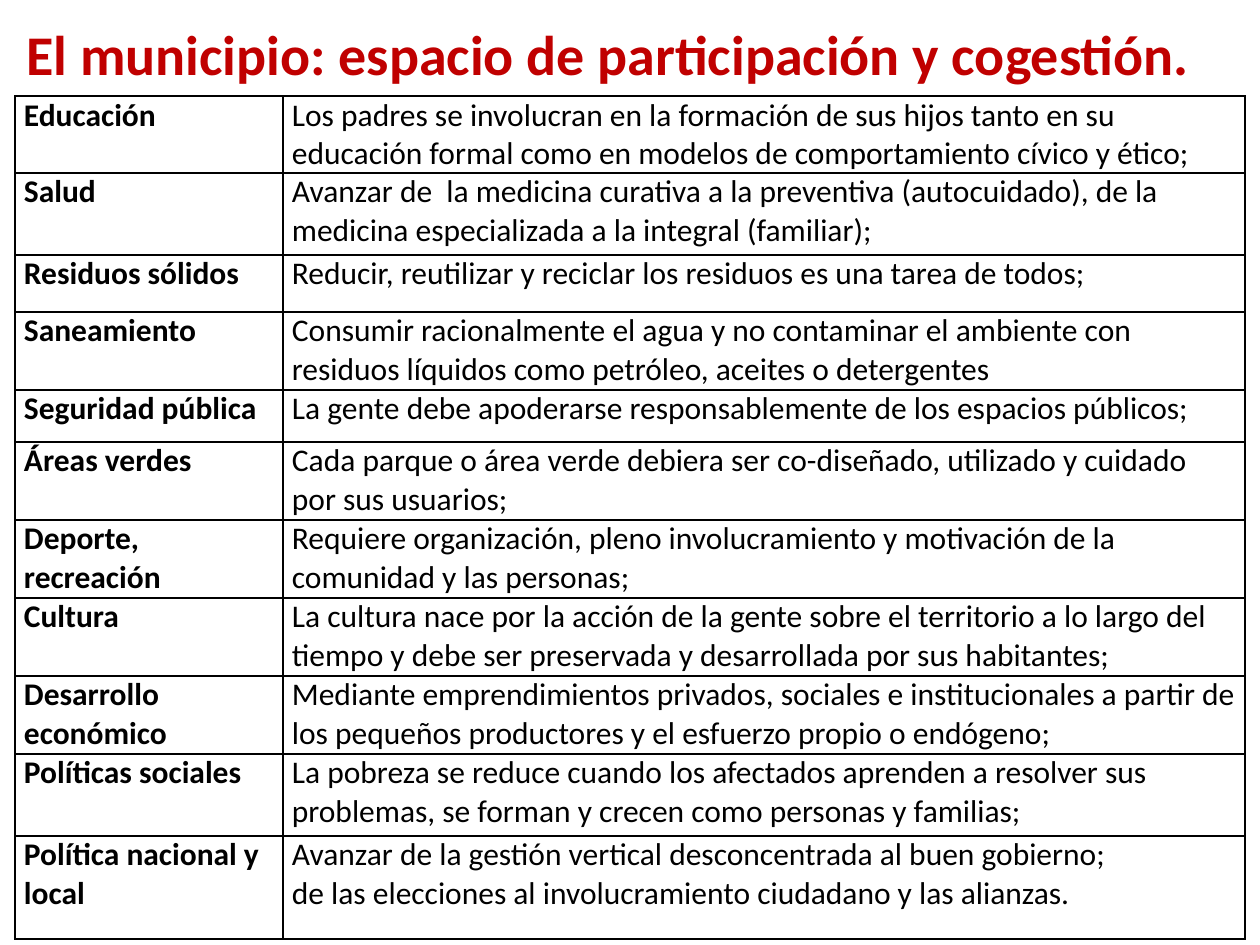
from lxml.etree import SubElement
from pptx import Presentation
from pptx.dml.color import RGBColor
from pptx.enum.text import MSO_ANCHOR, MSO_AUTO_SIZE, PP_ALIGN
from pptx.oxml.ns import qn
from pptx.util import Emu, Pt

# Content
TITLE = "El municipio: espacio de participación y cogestión. "
# (area, paragraphs, row height in px)
AREAS = [
    ("Educación", ["Los padres se involucran en la formación de sus hijos tanto en su educación formal como en modelos de comportamiento cívico y ético;"], 77),
    ("Salud", ["Avanzar de  la medicina curativa a la preventiva (autocuidado), de la medicina especializada a la integral (familiar);"], 82),
    ("Residuos sólidos", ["Reducir, reutilizar y reciclar los residuos es una tarea de todos;"], 57),
    ("Saneamiento", ["Consumir racionalmente el agua y no contaminar el ambiente con residuos líquidos como petróleo, aceites o detergentes"], 78),
    ("Seguridad pública", ["La gente debe apoderarse responsablemente de los espacios públicos;"], 52),
    ("Áreas verdes", ["Cada parque o área verde debiera ser co-diseñado, utilizado y cuidado por sus usuarios;"], 78),
    ("Deporte, recreación", ["Requiere organización, pleno involucramiento y motivación de la comunidad y las personas;"], 78),
    ("Cultura", ["La cultura nace por la acción de la gente sobre el territorio a lo largo del tiempo y debe ser preservada y desarrollada por sus habitantes;"], 78),
    ("Desarrollo económico", ["Mediante emprendimientos privados, sociales e institucionales a partir de los pequeños productores y el esfuerzo propio o endógeno;"], 78),
    ("Políticas sociales", ["La pobreza se reduce cuando los afectados aprenden a resolver sus problemas, se forman y crecen como personas y familias;"], 82),
    ("Política nacional y local", ["Avanzar de la gestión vertical desconcentrada al buen gobierno;",
                                   "de las elecciones al involucramiento ciudadano y las alianzas."], 103),
]

FONT = "Calibri"
RED = RGBColor(0xC0, 0x00, 0x00)
BLACK = RGBColor(0, 0, 0)
COLUMN_WIDTHS = (268, 962)


def px(length):
    return Emu(length * 914400 // 126)


def add_text(paragraph, text, size, color, bold):
    run = paragraph.add_run()
    run.text = text
    run.font.name = FONT
    run.font.size = Pt(size)
    run.font.color.rgb = color
    run.font.bold = bold


def add_borders(cell):
    properties = cell._tc.get_or_add_tcPr()
    for side in ("a:lnL", "a:lnR", "a:lnT", "a:lnB"):
        border = SubElement(properties, qn(side), w=str(Pt(1)))
        fill = SubElement(border, qn("a:solidFill"))
        SubElement(fill, qn("a:srgbClr"), val=str(BLACK))


def fill_cell(cell, paragraphs, bold):
    cell.margin_left = cell.margin_right = px(9)
    cell.margin_top = cell.margin_bottom = 0
    cell.vertical_anchor = MSO_ANCHOR.TOP
    frame = cell.text_frame
    for index, text in enumerate(paragraphs):
        paragraph = frame.add_paragraph() if index else frame.paragraphs[0]
        add_text(paragraph, text, 18, BLACK, bold)
    # Borders come before the fill in the cell properties
    add_borders(cell)
    cell.fill.background()


presentation = Presentation()
presentation.slide_width, presentation.slide_height = px(1260), px(945)
slide = presentation.slides.add_slide(presentation.slide_layouts[5])

# Title
title = slide.shapes.title
title.left, title.top, title.width, title.height = px(0), px(24), px(1230), px(59)
title.text_frame.auto_size = MSO_AUTO_SIZE.NONE
title.text_frame.vertical_anchor = MSO_ANCHOR.MIDDLE
heading = title.text_frame.paragraphs[0]
heading.alignment = PP_ALIGN.CENTER
add_text(heading, TITLE, 32, RED, True)

# Table of areas
areas_height = sum(height for _, _, height in AREAS)
areas = slide.shapes.add_table(len(AREAS), 2, px(15), px(96),
                               px(sum(COLUMN_WIDTHS)), px(areas_height)).table
areas.first_row = areas.horz_banding = False
for column, width in zip(areas.columns, COLUMN_WIDTHS):
    column.width = px(width)
for row, (area, proposals, height) in zip(areas.rows, AREAS):
    row.height = px(height)
    fill_cell(row.cells[0], [area], True)
    fill_cell(row.cells[1], proposals, False)

presentation.save("out.pptx")
